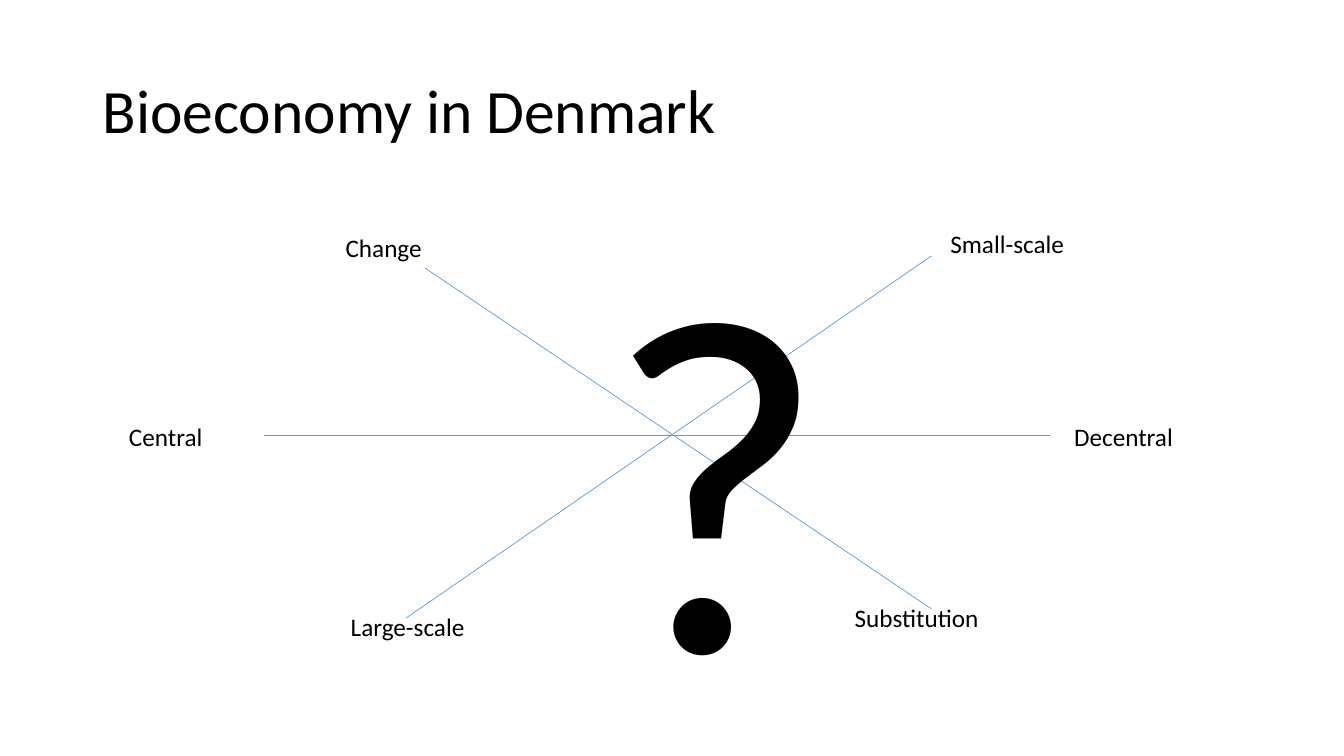
from dataclasses import dataclass
from lxml.etree import SubElement
from pptx import Presentation
from pptx.dml.color import RGBColor as Rgb
from pptx.enum.shapes import MSO_CONNECTOR as Link
from pptx.enum.text import MSO_ANCHOR as Anchor, MSO_AUTO_SIZE as Fit, PP_ALIGN as Align
from pptx.oxml.ns import qn
from pptx.util import Cm, Pt


@dataclass(frozen=True)
class Theme:
    font: str = "Calibri"
    ink: Rgb = Rgb(0x00, 0x00, 0x00)
    axis: Rgb = Rgb(0x5B, 0x9B, 0xD5)
    title: int = 44
    label: int = 18
    mark: int = 344
    line: float = 0.5


THEME = Theme()

# Axes of the debate: start and end, in cm from the diagram's corner
AXES = [
    (7.72, 2.76, 20.47, 11.34),
    (3.65, 6.97, 23.47, 6.97),
    (20.47, 2.45, 7.24, 11.57),
]

# Label at each end of an axis: left, top, width
LABELS = {
    "Change": (5.46, 1.74, 3.53),
    "Substitution": (18.29, 11.06, 3.73),
    "Central": (0, 6.49, 4.09),
    "Decentral": (23.82, 6.49, 3.25),
    "Small-scale": (20.7, 1.64, 3.86),
    "Large-scale": (5.59, 11.29, 3.66),
}


def add_text(slide, text, box, size, frame=None, para=None):
    shape = slide.shapes.add_textbox(*map(Cm, box))
    body = shape.text_frame
    line = body.paragraphs[0]
    line.text = text
    font = {"name": THEME.font, "size": Pt(size)}
    for part, look in ((body, {"word_wrap": True, **(frame or {})}),
                       (line, para or {}), (line.runs[0].font, font)):
        for key, value in look.items():
            setattr(part, key, value)
    line.runs[0].font.color.rgb = THEME.ink


def add_axis(slide, ends):
    axis = slide.shapes.add_connector(Link.STRAIGHT, *map(Cm, ends))
    axis.line.color.rgb = THEME.axis
    axis.line.width = Pt(THEME.line)
    SubElement(axis._element.spPr, qn("a:effectLst"))


def add_title(slide, box):
    add_text(slide, "Bioeconomy in Denmark", box, THEME.title,
             {"vertical_anchor": Anchor.MIDDLE}, {"line_spacing": 0.9})


def add_diagram(slide, left, top):
    grow = {"auto_size": Fit.SHAPE_TO_FIT_TEXT}
    # Crossing axes
    for x1, y1, x2, y2 in AXES:
        add_axis(slide, (left + x1, top + y1, left + x2, top + y2))
    # Labels at the ends
    for text, (x, y, width) in LABELS.items():
        add_text(slide, text, (left + x, top + y, width, 1.02), THEME.label, grow)
    # Large question mark on top
    add_text(slide, "?", (left + 11.99, top + 0.19, 4.06, 14.96), THEME.mark,
             grow, {"alignment": Align.CENTER})


def main():
    deck = Presentation()
    deck.slide_width, deck.slide_height = Cm(33.87), Cm(19.05)
    slide = deck.slides.add_slide(deck.slide_layouts[6])
    add_title(slide, (2.34, 1.02, 29.21, 3.68))
    add_diagram(slide, 3, 4)
    deck.save("out.pptx")


if __name__ == "__main__":
    main()
